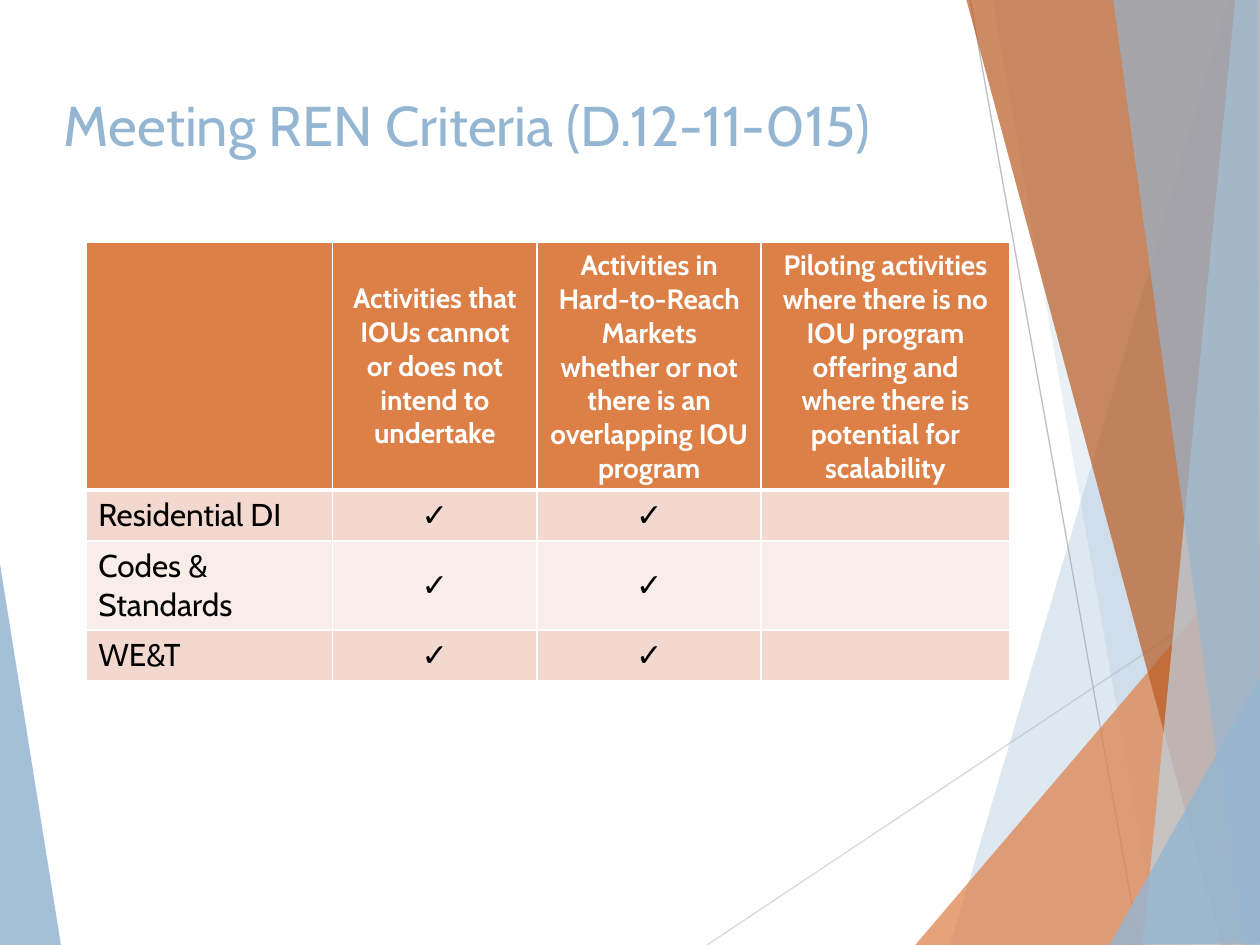
"""Build the slide on meeting the REN criteria, with a check table and a faceted border."""
from lxml import etree
from pptx import Presentation
from pptx.dml.color import RGBColor
from pptx.enum import shapes, text
from pptx.oxml import ns
from pptx.util import Pt

BLUE = RGBColor(0x94, 0xB6, 0xD2)
PALE_BLUE = RGBColor(0xBF, 0xD3, 0xE4)
ORANGE = RGBColor(0xDD, 0x80, 0x47)
RUST = RGBColor(0xB9, 0x5B, 0x22)
PINK = RGBColor(0xF2, 0xD8, 0xCF)
PALE_PINK = RGBColor(0xF9, 0xED, 0xE9)
LIGHT_GREY = RGBColor(0xD9, 0xD9, 0xD9)
GREY = RGBColor(0xBF, 0xBF, 0xBF)
WHITE = RGBColor(0xFF, 0xFF, 0xFF)
BLACK = RGBColor(0, 0, 0)


def write(frame, words, size=18, color=BLACK, bold=False, align=text.PP_ALIGN.LEFT):
    paragraph = frame.paragraphs[0]
    paragraph.alignment = align
    run = paragraph.add_run()
    run.text = words
    run.font.name = "Cabin"
    run.font.size = Pt(size)
    run.font.bold = bold
    run.font.color.rgb = color


def add_border(cell, side, width):
    properties = cell._tc.get_or_add_tcPr()
    line = etree.SubElement(properties, ns.qn(f"a:ln{side}"), w=str(Pt(width)))
    fill = etree.SubElement(line, ns.qn("a:solidFill"))
    etree.SubElement(fill, ns.qn("a:srgbClr"), val=str(WHITE))


deck = Presentation()
deck.slide_width, deck.slide_height = Pt(720), Pt(540)
slide = deck.slides.add_slide(deck.slide_layouts[6])

left_facet = (BLUE, 85, [(-0.7, 316), (35.3, 540.7), (-0.7, 540)])
right_facets = [
    (BLUE, 30, [(702, 0), (543, 540), (721, 540.7), (720.7, 0.7)]),
    (BLUE, 20, [(567.4, -0.7), (661.7, 540), (720.7, 540), (720.7, -0.7)]),
    (ORANGE, 72, [(522.7, 540), (720, 309), (720.7, 540)]),
    (RUST, 70, [(552.2, -0.7), (698.4, 540), (720.7, 539.3), (720.7, -0.7)]),
    (PALE_BLUE, 70, [(706.3, -0.7), (653, 540), (720.7, 540), (720, -0.7)]),
    (BLUE, 65, [(635.8, -0.7), (710, 540), (720, 540), (718.6, -0.7)]),
    (BLUE, 80, [(634.3, 540), (720.7, 385.2), (720.7, 539.3)]),
]
rays = [
    (LIGHT_GREY, (404, 540), (720.7, 329)),
    (GREY, (554.4, 0), (651, 540)),
]

for color, start, end in rays:
    ray = slide.shapes.add_connector(
        shapes.MSO_CONNECTOR.STRAIGHT, *map(Pt, start + end))
    ray.line.color.rgb = color
    ray.line.width = Pt(0.75)
    etree.SubElement(ray._element.spPr, ns.qn("a:effectLst"))

for color, opacity, corners in [left_facet] + right_facets:
    outline = slide.shapes.build_freeform(*corners[0], scale=Pt(1))
    outline.add_line_segments(corners[1:], close=True)
    facet = outline.convert_to_shape()
    facet.shadow.inherit = False
    facet.line.fill.background()
    facet.fill.solid()
    facet.fill.fore_color.rgb = color
    tint = facet._element.spPr.find(ns.qn("a:solidFill"))[0]
    etree.SubElement(tint, ns.qn("a:alpha"), val=str(opacity * 1000))

title = slide.shapes.add_textbox(Pt(29.5), Pt(48.2), Pt(540), Pt(103.7)).text_frame
title.word_wrap = True
write(title, "Meeting REN Criteria (D.12-11-015)", size=32, color=BLUE)

criteria = [
    "",
    "Activities that IOUs cannot or does not intend to undertake",
    "Activities in Hard-to-Reach Markets whether or not there is an overlapping IOU program",
    "Piloting activities where there is no IOU program offering and where there is "
    "potential for scalability",
]
programs = ["Residential DI", "Codes & Standards", "WE&T"]
rows = [criteria] + [[program, "✓", "✓", ""] for program in programs]
row_fills = [ORANGE, PINK, PALE_PINK, PINK]
column_widths = [141, 117, 128, 142]
row_heights = [141, 29, 51, 29]

table = slide.shapes.add_table(
    len(rows), len(criteria), Pt(49), Pt(138.5),
    Pt(sum(column_widths)), Pt(sum(row_heights))).table
for column, width in zip(table.columns, column_widths):
    column.width = Pt(width)

for r, (row, height, fill) in enumerate(zip(rows, row_heights, row_fills)):
    table.rows[r].height = Pt(height)
    header = r == 0
    for c, words in enumerate(row):
        cell = table.cell(r, c)
        borders = {"L": 1, "R": 1, "T": 3 if r == 1 else 1, "B": 3 if header else 1}
        for side, width in borders.items():
            add_border(cell, side, width)
        cell.fill.solid()
        cell.fill.fore_color.rgb = fill
        if c:
            cell.vertical_anchor = text.MSO_ANCHOR.MIDDLE
        if words:
            write(cell.text_frame, words, size=16 if header else 18,
                  color=WHITE if header else BLACK, bold=header,
                  align=text.PP_ALIGN.CENTER if c else text.PP_ALIGN.LEFT)

deck.save("out.pptx")
